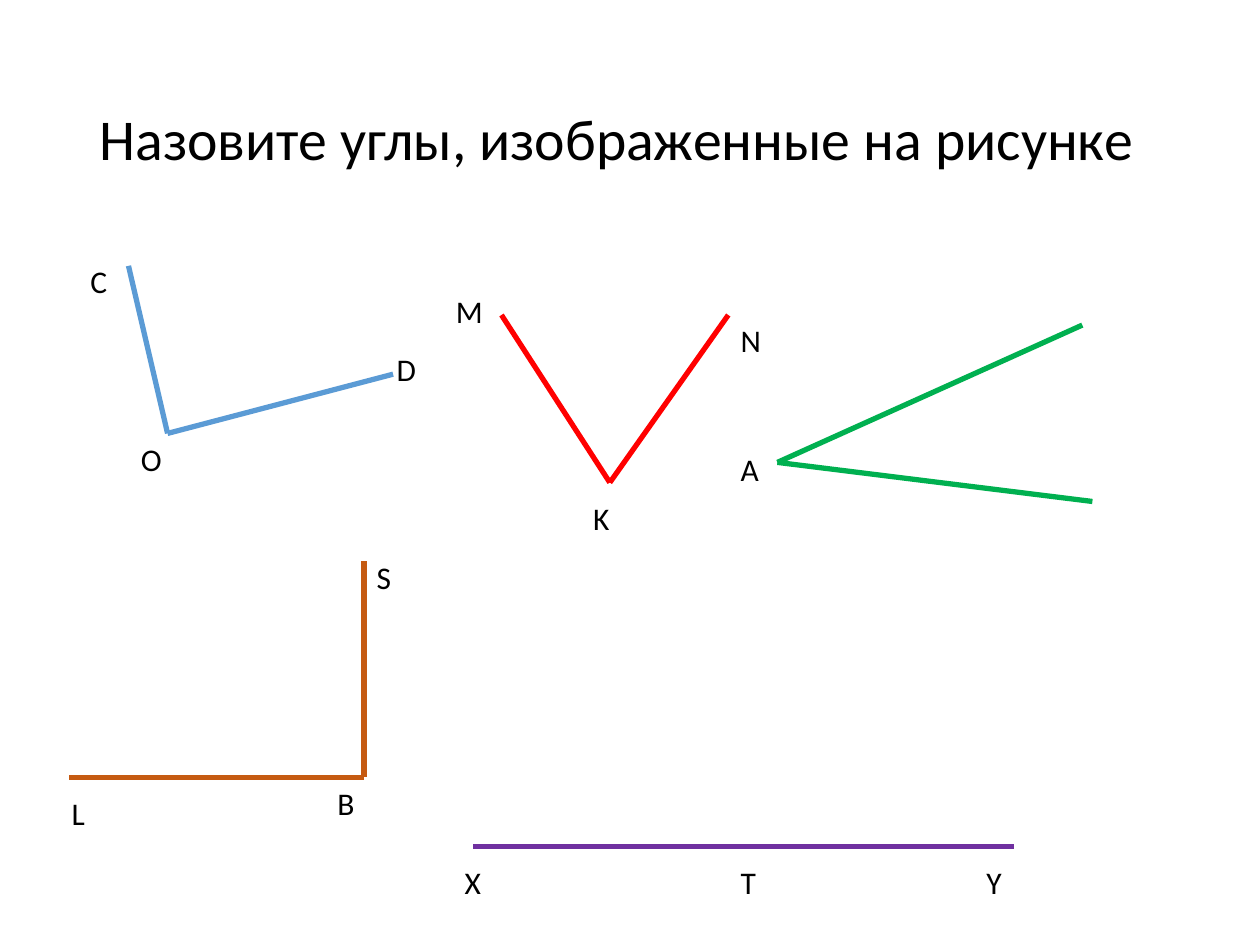
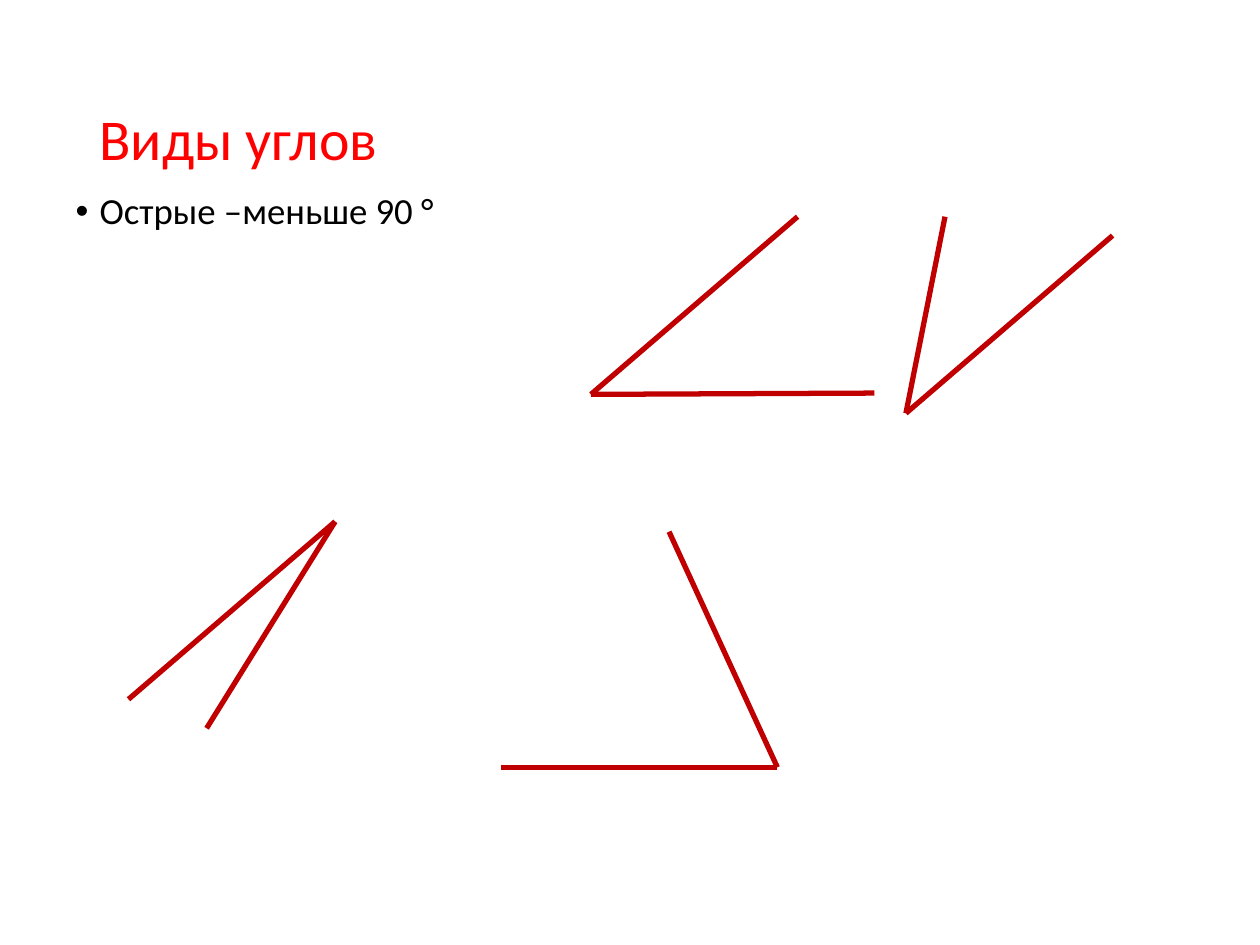
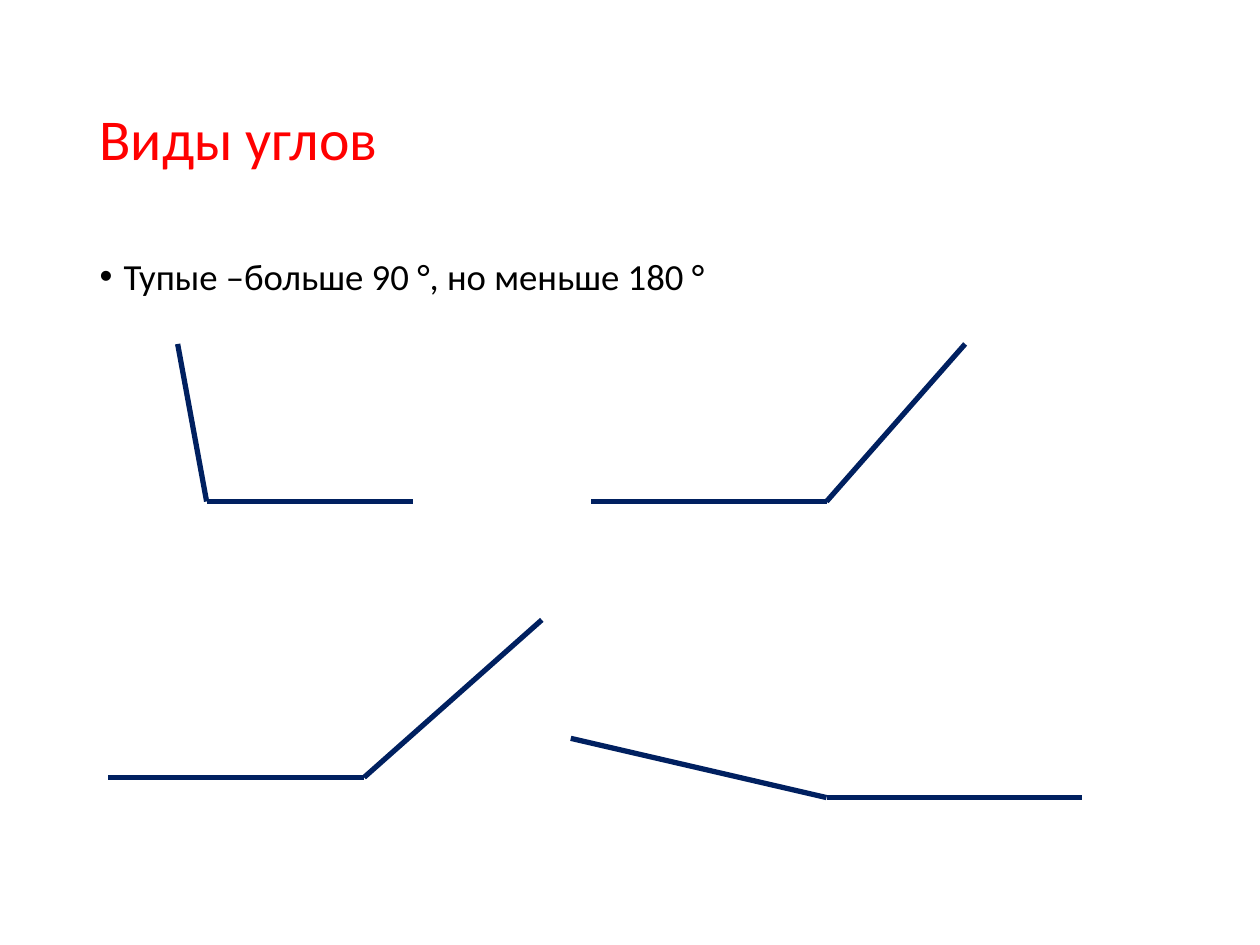
from typing import NamedTuple

from lxml import etree
from pptx import Presentation
from pptx.dml.color import RGBColor
from pptx.enum import shapes, text
from pptx.oxml import ns
from pptx.util import Inches, Pt

FONT = "Calibri"
BLACK, RED, BLUE, ORANGE = "000000", "FF0000", "5B9BD5", "C55A11"
GREEN, PURPLE, CRIMSON, NAVY = "00B050", "7030A0", "C00000", "002060"

TITLE_BOX = (0.69, 0.4, 8.62, 1.45)
BULLET_INDENT = 0.19
LABEL_HEIGHT = 0.4

Point = tuple[float, float]
Box = tuple[float, float, float, float]


class Angle(NamedTuple):
    first_end: Point
    vertex: Point
    second_end: Point
    color: str


class Label(NamedTuple):
    letter: str
    left: float
    top: float
    width: float


class AngleKind(NamedTuple):
    definition: str
    box: Box
    angles: list[Angle]


NAMED_ANGLES = [
    Angle((1.02, 2.11), (1.33, 3.44), (3.12, 2.97), BLUE),
    Angle((3.98, 2.5), (4.84, 3.83), (5.78, 2.5), RED),
    Angle((0.55, 6.17), (2.89, 6.17), (2.89, 4.45), ORANGE),
    Angle((8.59, 2.58), (6.17, 3.67), (8.67, 3.98), GREEN),
    Angle((3.75, 6.72), (5.55, 6.72), (8.05, 6.72), PURPLE),
]

LABELS = [
    Label("C", 0.62, 2.03, 0.34),
    Label("O", 1.02, 3.44, 0.37),
    Label("D", 3.05, 2.73, 0.36),
    Label("M", 3.52, 2.27, 0.42),
    Label("K", 4.61, 3.91, 0.33),
    Label("N", 5.78, 2.5, 0.36),
    Label("A", 5.78, 3.52, 0.35),
    Label("L", 0.47, 6.25, 0.31),
    Label("B", 2.58, 6.17, 0.34),
    Label("S", 2.89, 4.38, 0.32),
    Label("X", 3.59, 6.8, 0.33),
    Label("T", 5.78, 6.8, 0.32),
    Label("Y", 7.73, 6.8, 0.32),
]

ANGLE_KINDS = [
    AngleKind("Острые –меньше 90 °", (0.5, 1.48, 3.41, 1.48), [
        Angle((6.33, 1.72), (4.69, 3.13), (6.94, 3.12), CRIMSON),
        Angle((1.02, 5.55), (2.66, 4.14), (1.64, 5.78), CRIMSON),
        Angle((8.83, 1.87), (7.19, 3.28), (7.5, 1.72), CRIMSON),
        Angle((3.98, 6.09), (6.17, 6.09), (5.31, 4.22), CRIMSON),
    ]),
    AngleKind("Тупые –больше 90 °, но меньше 180 °", (0.69, 2, 8.62, 4.76), [
        Angle((3.28, 3.98), (1.64, 3.98), (1.41, 2.73), NAVY),
        Angle((4.69, 3.98), (6.56, 3.98), (7.66, 2.73), NAVY),
        Angle((0.86, 6.17), (2.89, 6.17), (4.3, 4.92), NAVY),
        Angle((8.59, 6.33), (6.56, 6.33), (4.53, 5.86), NAVY),
    ]),
]


def rgb(color: str) -> RGBColor:
    return RGBColor.from_string(color)


def write(shape, words: str, size: float, color: str = BLACK):
    """Put one left-aligned paragraph in the shape and return it."""
    shape.text_frame.text = words
    paragraph = shape.text_frame.paragraphs[0]
    paragraph.alignment = text.PP_ALIGN.LEFT
    paragraph.font.name = FONT
    paragraph.font.size = Pt(size)
    paragraph.font.color.rgb = rgb(color)
    return paragraph


def fill_placeholder(shape, box: Box, words: str, size: float, color: str = BLACK):
    shape.left, shape.top, shape.width, shape.height = map(Inches, box)
    paragraph = write(shape, words, size, color)
    paragraph.line_spacing = 0.9
    shape.text_frame.auto_size = text.MSO_AUTO_SIZE.NONE
    return paragraph


def add_titled_slide(presentation, layout_name: str, title: str, color: str):
    layout = presentation.slide_layouts.get_by_name(layout_name)
    slide = presentation.slides.add_slide(layout)
    fill_placeholder(slide.shapes.title, TITLE_BOX, title, 33, color)
    slide.shapes.title.text_frame.vertical_anchor = text.MSO_ANCHOR.MIDDLE
    return slide


def add_definition(slide, kind: AngleKind) -> None:
    paragraph = fill_placeholder(slide.placeholders[1], kind.box, kind.definition, 21)
    paragraph.space_before = Pt(7.5)
    properties = paragraph._p.get_or_add_pPr()
    properties.set("marL", str(Inches(BULLET_INDENT)))
    properties.set("indent", str(-Inches(BULLET_INDENT)))


def add_angle(slide, angle: Angle) -> None:
    for end in (angle.first_end, angle.second_end):
        ray = slide.shapes.add_connector(
            shapes.MSO_CONNECTOR.STRAIGHT, *map(Inches, angle.vertex + end))
        ray.line.color.rgb = rgb(angle.color)
        ray.line.width = Pt(3)
        etree.SubElement(ray._element.spPr, ns.qn("a:effectLst"))


def add_label(slide, label: Label) -> None:
    box = (label.left, label.top, label.width, LABEL_HEIGHT)
    shape = slide.shapes.add_textbox(*map(Inches, box))
    write(shape, label.letter, 18)
    shape.text_frame.word_wrap = False
    shape.text_frame.auto_size = text.MSO_AUTO_SIZE.SHAPE_TO_FIT_TEXT


def main() -> None:
    presentation = Presentation()
    presentation.slide_width, presentation.slide_height = Inches(10), Inches(7.5)

    slide = add_titled_slide(
        presentation, "Title Only", "Назовите углы, изображенные на рисунке", BLACK)
    for angle in NAMED_ANGLES:
        add_angle(slide, angle)
    for label in LABELS:
        add_label(slide, label)

    for kind in ANGLE_KINDS:
        slide = add_titled_slide(presentation, "Title and Content", "Виды углов", RED)
        add_definition(slide, kind)
        for angle in kind.angles:
            add_angle(slide, angle)

    presentation.save("out.pptx")


if __name__ == "__main__":
    main()
